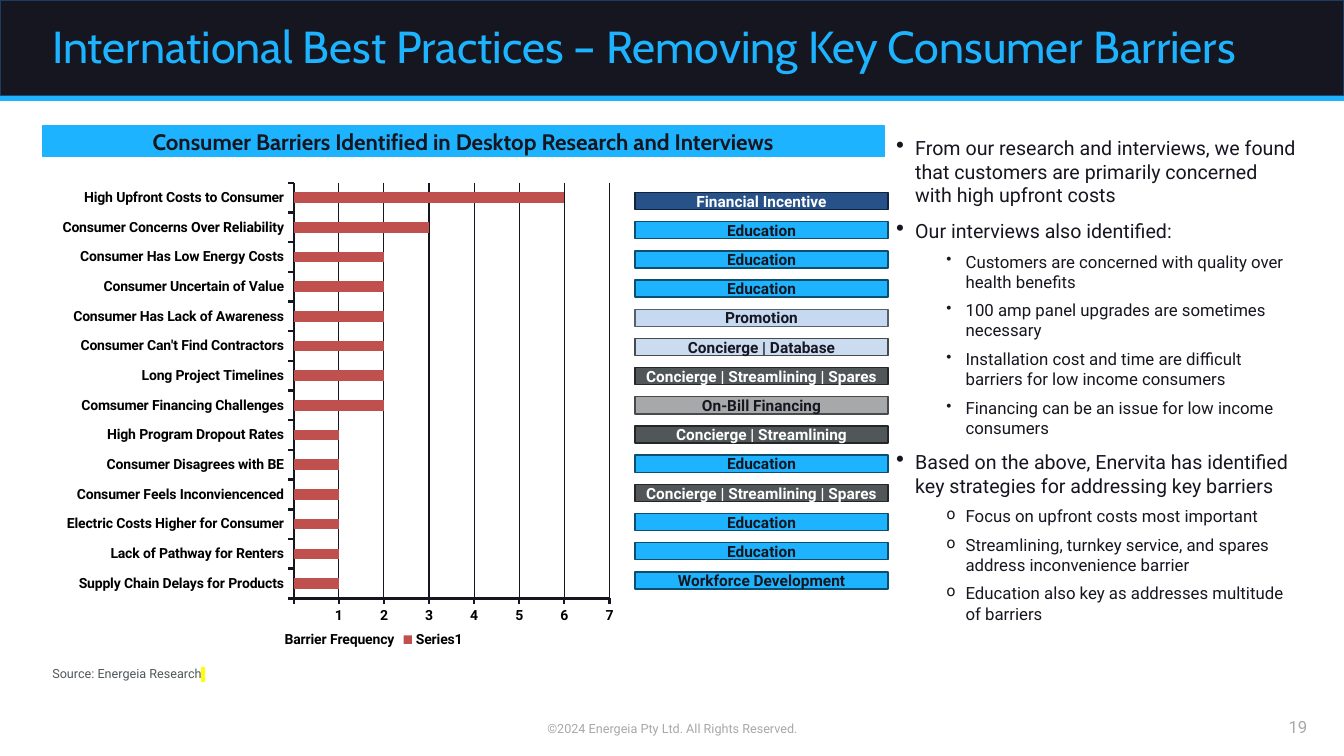
import lxml.etree
import pptx
import pptx.chart.data
import pptx.dml.color
import pptx.enum.chart
import pptx.enum.shapes
import pptx.enum.text
import pptx.oxml.ns
import pptx.util

Pt = pptx.util.Pt
Inches = pptx.util.Inches
qn = pptx.oxml.ns.qn
ALIGN = pptx.enum.text.PP_ALIGN
ANCHOR = pptx.enum.text.MSO_ANCHOR
COLORS = {
    "ink": "161620", "sky": "1DB3FE", "navy": "265189", "pale": "C6D9F1", "mist": "CBDBF0",
    "slate": "515659", "silver": "A7A8AA", "white": "FFFFFF", "black": "000000",
    "bar": "C0504D", "band edge": "1C3C65", "navy edge": "11243C", "sky edge": "0D4E6F",
    "pale edge": "575F6A", "silver edge": "494A4B", "slate edge": "242627", "marker": "FFFF00",
}
COLORS = {name: pptx.dml.color.RGBColor.from_string(value) for name, value in COLORS.items()}

presentation = pptx.Presentation()
presentation.slide_width = Inches(13.33)
presentation.slide_height = Inches(7.5)
slide = presentation.slides.add_slide(presentation.slide_layouts[6])

# The slide is a grid of 100 columns by 100 rows
column = presentation.slide_width / 100
row = presentation.slide_height / 100


def add_box(cells, fill=None, line=None, line_width=1, anchor=ANCHOR.TOP, insets=(0.1, 0.1)):
    left, top, width, height = cells
    place = [round(n) for n in (left * column, top * row, width * column, height * row)]
    if fill:
        shape = slide.shapes.add_shape(pptx.enum.shapes.MSO_SHAPE.RECTANGLE, *place)
        shape.shadow.inherit = False
        shape.fill.solid()
        shape.fill.fore_color.rgb = COLORS[fill]
        if line:
            shape.line.color.rgb = COLORS[line]
            shape.line.width = Pt(line_width)
        else:
            shape.line.fill.background()
    else:
        shape = slide.shapes.add_textbox(*place)
    across, down = (Inches(inset) for inset in insets)
    frame_format = {"word_wrap": True, "vertical_anchor": anchor, "margin_left": across,
                    "margin_right": across, "margin_top": down, "margin_bottom": down}
    for name, value in frame_format.items():
        setattr(shape.text_frame, name, value)
    return shape.text_frame


def write(paragraph, text, size, color, font="Roboto", bold=False, highlight=None, **layout):
    for name, value in layout.items():
        setattr(paragraph, name, value)
    run = paragraph.add_run()
    run.text = text
    if highlight:
        mark = lxml.etree.SubElement(run.font._element, qn("a:highlight"))
        lxml.etree.SubElement(mark, qn("a:srgbClr"), val=str(COLORS[highlight]))
    for name, value in {"name": font, "size": Pt(size), "bold": bold}.items():
        setattr(run.font, name, value)
    run.font.color.rgb = COLORS[color]


# Title band
add_box((0, 0, 100, 12.67), "ink", "band edge")
add_box((0, 12.67, 100, 0.67), "sky")
title = add_box((3.15, 1.87, 94.13, 9.33), anchor=ANCHOR.MIDDLE)
write(title.paragraphs[0], "International Best Practices – Removing Key Consumer Barriers",
      32, "sky", "Cabin", line_spacing=0.9)

# Chart heading
heading = add_box((3.15, 16.67, 62.63, 4), "sky", "sky", 0.75, ANCHOR.MIDDLE)
write(heading.paragraphs[0], "Consumer Barriers Identified in Desktop Research and Interviews",
      16, "ink", "Cabin", True, alignment=ALIGN.CENTER)

# Barriers from top to bottom: name, frequency, strategy, tag colour, tag edge, text colour
education = ("Education", "sky", "sky edge", "ink")
spares = ("Concierge | Streamlining | Spares", "slate", "slate edge", "white")
barriers = [
    ("High Upfront Costs to Consumer", 6, "Financial Incentive", "navy", "navy edge", "white"),
    ("Consumer Concerns Over Reliability", 3, *education),
    ("Consumer Has Low Energy Costs", 2, *education),
    ("Consumer Uncertain of Value", 2, *education),
    ("Consumer Has Lack of Awareness", 2, "Promotion", "pale", "pale edge", "ink"),
    ("Consumer Can't Find Contractors", 2, "Concierge | Database", "mist", "silver edge", "ink"),
    ("Long Project Timelines", 2, *spares),
    ("Comsumer Financing Challenges", 2, "On-Bill Financing", "silver", "silver edge", "ink"),
    ("High Program Dropout Rates", 1, "Concierge | Streamlining", "slate", "slate edge", "white"),
    ("Consumer Disagrees with BE", 1, *education),
    ("Consumer Feels Inconviencenced", 1, *spares),
    ("Electric Costs Higher for Consumer", 1, *education),
    ("Lack of Pathway for Renters", 1, *education),
    ("Supply Chain Delays for Products", 1, "Workforce Development", "sky", "sky edge", "ink"),
]

# Strategy tags
for index, (_, _, strategy, fill, edge, color) in enumerate(barriers):
    tag = add_box((47.25, 25.47 + index * 3.86, 18.83, 2.27), fill, edge,
                  anchor=ANCHOR.MIDDLE, insets=(0.1, 0.05))
    write(tag.paragraphs[0], strategy, 11, color, bold=True, alignment=ALIGN.CENTER)

# Barrier chart
data = pptx.chart.data.CategoryChartData()
data.categories = [barrier[0] for barrier in reversed(barriers)]
data.add_series("Series1", [barrier[1] for barrier in reversed(barriers)])
chart = slide.shapes.add_chart(
    pptx.enum.chart.XL_CHART_TYPE.BAR_CLUSTERED, round(3.15 * column), round(21.6 * row),
    round(43.5 * column), round(64.67 * row), data).chart
chart.has_title = False
chart.has_legend = True
chart.legend.position = pptx.enum.chart.XL_LEGEND_POSITION.RIGHT
chart.legend.include_in_layout = False
plot = chart.plots[0]
plot.gap_width = 182
plot.vary_by_categories = False
plot.series[0].format.fill.solid()
plot.series[0].format.fill.fore_color.rgb = COLORS["bar"]

value_axis = chart.value_axis
axis_format = {"minimum_scale": 0, "maximum_scale": 7, "major_unit": 1,
               "has_major_gridlines": True, "has_title": True}
for name, value in axis_format.items():
    setattr(value_axis, name, value)
value_axis.tick_labels.number_format = "#,###"
value_axis.tick_labels.number_format_is_linked = False
write(value_axis.axis_title.text_frame.paragraphs[0], "Barrier Frequency", 10, "black", bold=True)
for axis in (value_axis, chart.category_axis):
    axis.major_tick_mark = pptx.enum.chart.XL_TICK_MARK.OUTSIDE
    axis.format.line.color.rgb = COLORS["ink"]
    axis.format.line.width = Pt(1.75)
value_axis.major_gridlines.format.line.color.rgb = COLORS["ink"]
value_axis.major_gridlines.format.line.width = Pt(0.75)
for font in (chart.font, chart.legend.font, value_axis.tick_labels.font,
             chart.category_axis.tick_labels.font):
    for name, value in {"name": "Roboto", "size": Pt(10), "bold": True}.items():
        setattr(font, name, value)
    font.color.rgb = COLORS["black"]

# Places of the plot, axis title and legend as shares of the chart
plot_area = chart._chartSpace.chart.plotArea
places = [
    (plot_area, None, {"x": 0.43, "y": 0.04, "w": 0.54, "h": 0.85}),
    (value_axis.axis_title._element, "c:tx", {"x": 0.41, "y": 0.95}),
    (chart.legend._element, "c:legendPos", {"x": 0.61, "y": 0.95}),
]
for element, previous, shares in places:
    for old in element.findall(qn("c:layout")):
        element.remove(old)
    layout = lxml.etree.Element(qn("c:layout"))
    position = 0 if previous is None else element.index(element.find(qn(previous))) + 1
    element.insert(position, layout)
    manual = lxml.etree.SubElement(layout, qn("c:manualLayout"))
    if element is plot_area:
        lxml.etree.SubElement(manual, qn("c:layoutTarget"), val="inner")
    for side in ("x", "y"):
        lxml.etree.SubElement(manual, qn(f"c:{side}Mode"), val="edge")
    for side, share in shares.items():
        lxml.etree.SubElement(manual, qn(f"c:{side}"), val=str(share))

# Findings: level, bullet, text
findings = [
    (0, "•", "From our research and interviews, we found that customers are primarily "
             "concerned with high upfront costs"),
    (0, "•", "Our interviews also identified:"),
    (1, "•", "Customers are concerned with quality over health benefits"),
    (1, "•", "100 amp panel upgrades are sometimes necessary"),
    (1, "•", "Installation cost and time are difficult barriers for low income consumers"),
    (1, "•", "Financing can be an issue for low income consumers"),
    (0, "•", "Based on the above, Enervita has identified key strategies for addressing "
             "key barriers"),
    (1, "o", "Focus on upfront costs most important"),
    (1, "o", "Streamlining, turnkey service, and spares address inconvenience barrier"),
    (1, "o", "Education also key as addresses multitude of barriers"),
]
body = add_box((65.93, 16.67, 31.35, 74.27))
for index, (level, bullet, text) in enumerate(findings):
    paragraph = body.add_paragraph() if index else body.paragraphs[0]
    properties = paragraph._p.get_or_add_pPr()
    properties.set("marL", str(Inches(0.19 + level * 0.5)))
    properties.set("indent", str(-Inches(0.19)))
    lxml.etree.SubElement(properties, qn("a:buSzPct"), val=("120000", "90000")[level])
    lxml.etree.SubElement(properties, qn("a:buChar"), char=bullet)
    write(paragraph, text, (14, 12)[level], "ink", level=level,
          space_before=Pt((6, 3)[level] if index else 0), space_after=Pt(3))

# Source and footer
source = add_box((3.15, 87.47, 62.63, 3.33), anchor=ANCHOR.MIDDLE).paragraphs[0]
write(source, "Source: Energeia Research", 9, "slate")
write(source, " ", 9, "slate", highlight="marker")
footers = [
    ((33.15, 94.53, 33.75, 3.47), "©2024 Energeia Pty Ltd. All Rights Reserved.", 9, ALIGN.CENTER),
    ((74.78, 94.67, 22.5, 3.47), "19", 12, ALIGN.RIGHT),
]
for cells, text, size, alignment in footers:
    footer = add_box(cells, anchor=ANCHOR.BOTTOM, insets=(0, 0.05))
    write(footer.paragraphs[0], text, size, "silver", alignment=alignment)

presentation.save("out.pptx")
